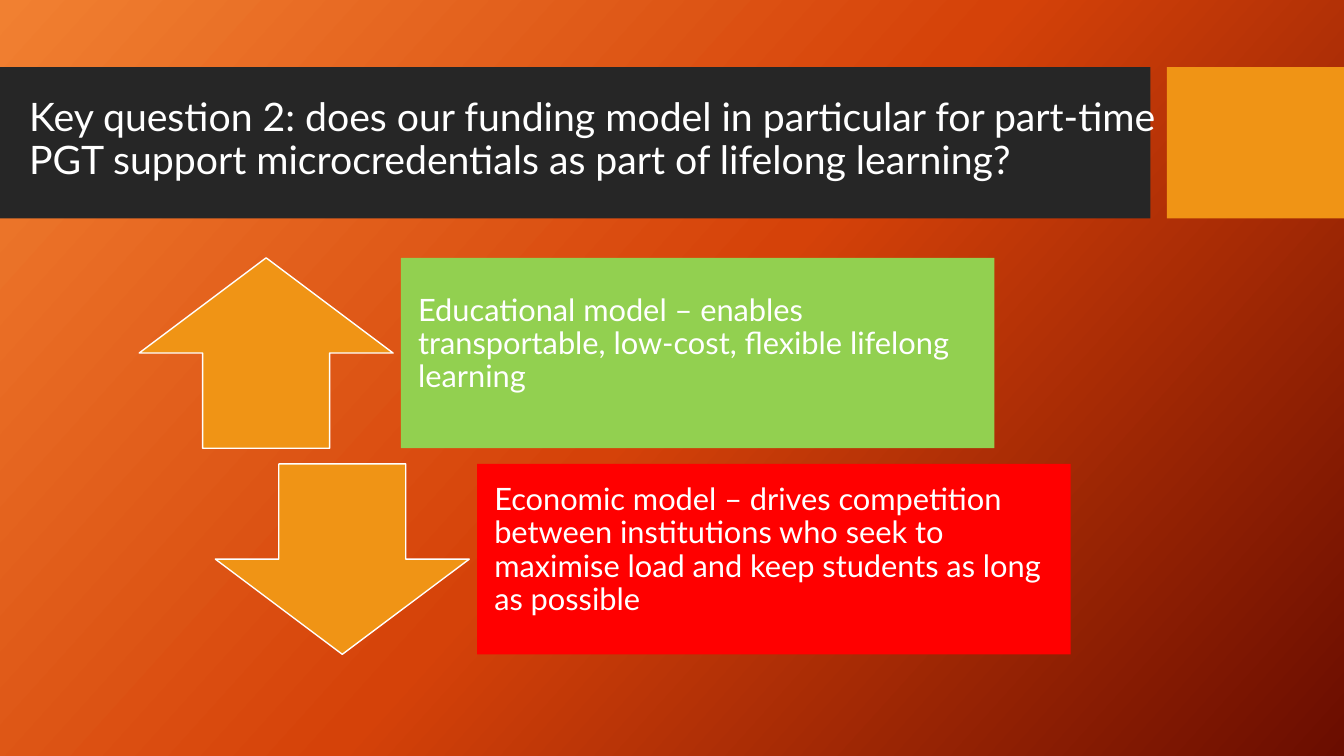
import copy

import pptx
import pptx.dml.color
import pptx.enum.shapes
import pptx.enum.text
import pptx.oxml.ns
import pptx.util

Pt = pptx.util.Pt
SHAPE = pptx.enum.shapes.MSO_SHAPE
WHITE, ORANGE, DARK = "FFFFFF", "F09415", "262626"
BACKGROUND = [(0, "F18031"), (0.5, "D54209"), (1, "6A0D00")]
TITLE = ("Key question 2: does our funding model in particular for part-time "
         "PGT support microcredentials as part of lifelong learning?")
MODELS = [
    (SHAPE.UP_ARROW, "92D050",
     "Educational model – enables transportable, low-cost, flexible lifelong learning"),
    (SHAPE.DOWN_ARROW, "FF0000",
     "Economic model – drives competition between institutions who seek to "
     "maximise load and keep students as long as possible"),
]


def rgb(color):
    return pptx.dml.color.RGBColor.from_string(color)


def set_background(s, stops, angle):
    """Fill the slide with a gradient; the angle is clockwise in degrees."""
    fill = s.background.fill
    fill.gradient()
    fill.gradient_angle = 360 - angle
    stop_list = s.element.find(".//" + pptx.oxml.ns.qn("a:gsLst"))
    stop_list.append(copy.deepcopy(stop_list[0]))
    for stop, (position, color) in zip(fill.gradient_stops, stops):
        stop.position = position
        stop.color.rgb = rgb(color)


def add_block(s, kind, left, top, width, height, fill, line=None):
    sp = s.shapes.add_shape(kind, Pt(left), Pt(top), Pt(width), Pt(height))
    sp.shadow.inherit = False
    sp.fill.solid()
    sp.fill.fore_color.rgb = rgb(fill)
    if line:
        sp.line.color.rgb = rgb(line)
        sp.line.width = Pt(1)
    else:
        sp.line.fill.background()
    return sp


def write(sp, text, size, color=WHITE, font="Lato", space_after=0, insets=(7.2, 3.6, 7.2, 3.6)):
    tf = sp.text_frame
    tf.word_wrap = True
    tf.auto_size = pptx.enum.text.MSO_AUTO_SIZE.NONE
    tf.vertical_anchor = pptx.enum.text.MSO_ANCHOR.MIDDLE
    tf.margin_left, tf.margin_top, tf.margin_right, tf.margin_bottom = map(Pt, insets)
    p = tf.paragraphs[0]
    p.alignment = pptx.enum.text.PP_ALIGN.LEFT
    p.line_spacing = 0.9
    p.space_before = Pt(0)
    p.space_after = Pt(space_after)
    r = p.add_run()
    r.text = text
    r.font.size = Pt(size)
    r.font.name = font
    r.font.color.rgb = rgb(color)


def add_title(s, text):
    add_block(s, SHAPE.RECTANGLE, 0, 48, 821.7, 108, DARK)
    add_block(s, SHAPE.RECTANGLE, 833.5, 48, 126.5, 108, ORANGE)
    title = s.shapes.title
    title.left, title.top, title.width, title.height = Pt(13.7), Pt(57.6), Pt(836.6), Pt(85)
    write(title, text, 28)
    s.shapes.element.append(title.element)  # bring in front of the bars


def add_model(s, row, arrow, color, text):
    """Add an arrow with its text box; each row steps down and to the right."""
    left, top, height = 99.4 + 54.4 * row, 184.2 + 147.2 * row, 136
    add_block(s, arrow, left, top, 181.4, height, ORANGE, line=WHITE)
    box = add_block(s, SHAPE.RECTANGLE, left + 187, top, 424, height, color)
    write(box, text, 22, space_after=7.7, insets=(12.3, 0, 12.3, 12.3))


def main():
    prs = pptx.Presentation()
    prs.slide_width, prs.slide_height = Pt(960), Pt(540)
    s = prs.slides.add_slide(prs.slide_layouts.get_by_name("Title Only"))
    set_background(s, BACKGROUND, 42)
    add_title(s, TITLE)
    for row, model in enumerate(MODELS):
        add_model(s, row, *model)
    prs.save("out.pptx")


if __name__ == "__main__":
    main()
